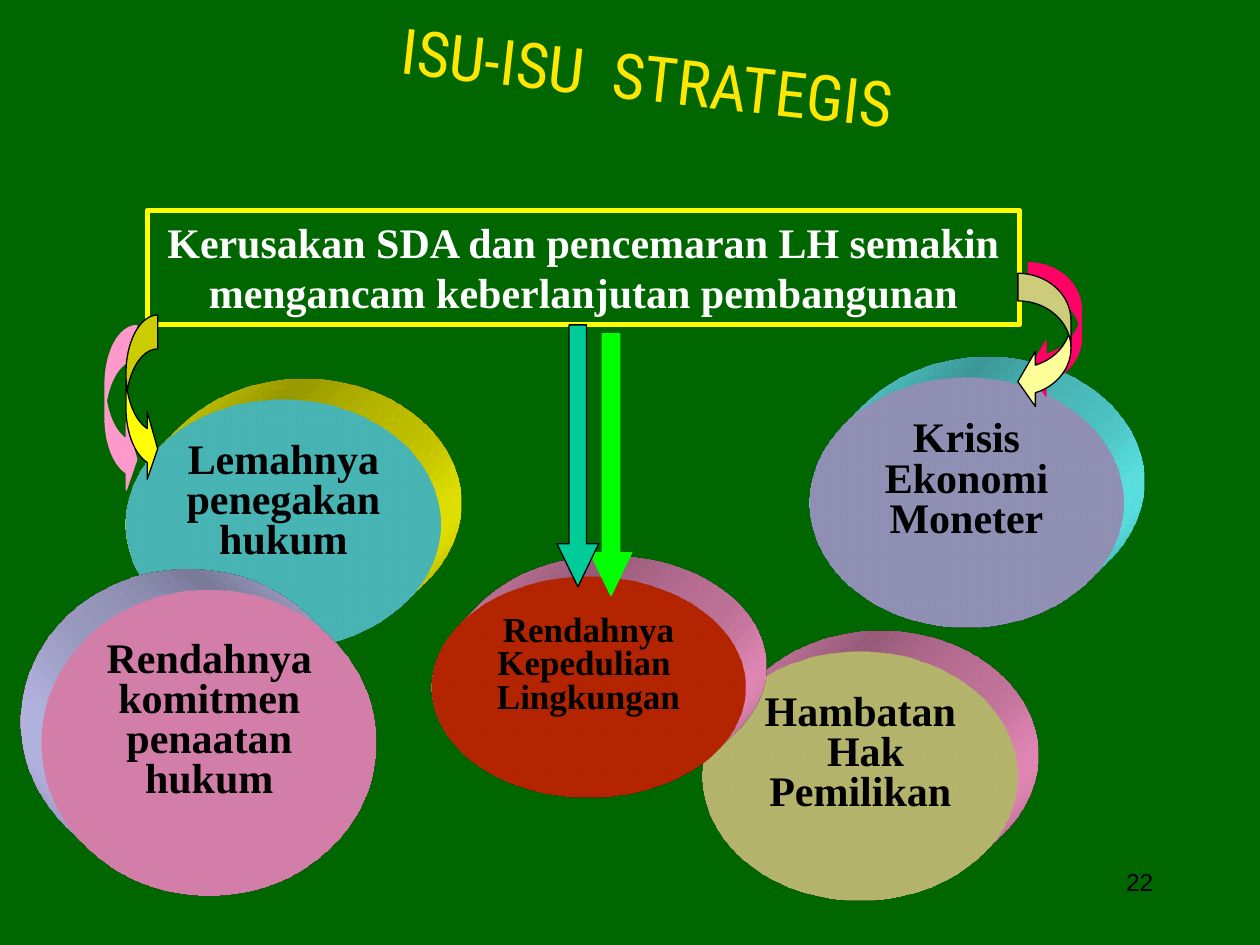
import lxml.etree
import pptx
import pptx.dml.color
import pptx.enum.dml
import pptx.enum.shapes
import pptx.enum.text
import pptx.oxml
import pptx.oxml.ns
import pptx.util

Cm = pptx.util.Cm
Pt = pptx.util.Pt
RGBColor = pptx.dml.color.RGBColor
SHAPE = pptx.enum.shapes.MSO_SHAPE
ALIGN = pptx.enum.text.PP_ALIGN

GREEN = RGBColor(0x00, 0x66, 0x00)
BLACK = RGBColor(0x00, 0x00, 0x00)
WHITE = RGBColor(0xFF, 0xFF, 0xFF)
YELLOW = RGBColor(0xFF, 0xFF, 0x00)
CREAM = RGBColor(0xFF, 0xFF, 0x99)
CYAN = RGBColor(0x66, 0xFF, 0xFF)
PINK = RGBColor(0xFF, 0x99, 0xCC)
LILAC = RGBColor(0xCC, 0xCC, 0xFF)
RED = RGBColor(0xFF, 0x33, 0x00)
CRIMSON = RGBColor(0xFF, 0x00, 0x66)
TEAL = RGBColor(0x00, 0xCC, 0x99)
LIME = RGBColor(0x00, 0xFF, 0x00)
TITLE_TOP = RGBColor(0xFF, 0xE7, 0x01)
TITLE_BOTTOM = RGBColor(0xFE, 0x3E, 0x02)


def write(box, text, size, font, color, align, spacing=None):
    """Fill a box with top-anchored paragraphs in one format."""
    frame = box.text_frame
    frame.word_wrap = True
    frame.vertical_anchor = pptx.enum.text.MSO_ANCHOR.TOP
    frame.text = text
    for para in frame.paragraphs:
        para.alignment = align
        para.line_spacing = spacing
        for span in para.runs:
            span.font.size = Pt(size)
            span.font.name = font
            span.font.bold = font == "Times New Roman"
            if color is not None:
                span.font.color.rgb = color


def extrude(shape, color, side):
    """Give a shape an oblique depth towards the named top corner."""
    ns = pptx.oxml.ns.nsdecls("a")
    properties = shape.element.spPr
    properties.append(pptx.oxml.parse_xml(
        f'<a:scene3d {ns}><a:camera prst="legacyOblique{side}"/>'
        '<a:lightRig rig="legacyFlat3" dir="b"/></a:scene3d>'))
    properties.append(pptx.oxml.parse_xml(
        f'<a:sp3d {ns} extrusionH="430200" prstMaterial="legacyMatte">'
        f'<a:extrusionClr><a:srgbClr val="{color}"/></a:extrusionClr></a:sp3d>'))


deck = pptx.Presentation()
deck.slide_width, deck.slide_height = Cm(25.4), Cm(19.05)
page = deck.slides.add_slide(deck.slide_layouts[5])
page.background.fill.solid()
page.background.fill.fore_color.rgb = GREEN

# Title
title = page.shapes.title
title.left, title.top, title.width, title.height = Cm(6.45), Cm(0.64), Cm(13.13), Cm(2.44)
title.rotation = 6.3
write(title, "ISU-ISU  STRATEGIS", 36, "Roboto Condensed", None, ALIGN.CENTER)
title.text_frame.word_wrap = False
title.text_frame.auto_size = pptx.enum.text.MSO_AUTO_SIZE.NONE
title_fill = title.text_frame.paragraphs[0].runs[0].font.fill
title_fill.gradient()
title_fill.gradient_angle = 276
for stop, color in zip(title_fill.gradient_stops, (TITLE_TOP, TITLE_BOTTOM)):
    stop.color.rgb = color

# Main issue
issue = page.shapes.add_shape(SHAPE.RECTANGLE, Cm(2.97), Cm(4.24), Cm(17.58), Cm(2.31))
issue.shadow.inherit = False
issue.fill.background()
issue.line.color.rgb = YELLOW
issue.line.width = Pt(3)
write(issue, "Kerusakan SDA dan pencemaran LH semakin mengancam keberlanjutan pembangunan",
      24, "Times New Roman", WHITE, ALIGN.CENTER)

# Causes: text, size, left, top, width, height, face, depth colour, depth side
causes = [
    ("Lemahnya penegakan hukum", 24, 2.54, 8.05, 6.35, 5.03, CYAN, YELLOW, "TopRight"),
    ("Rendahnya komitmen penaatan hukum", 24, 0.84, 11.89, 6.76, 6.17, PINK, LILAC, "TopLeft"),
    ("Krisis Ekonomi Moneter", 24, 16.31, 7.62, 6.35, 5.03, LILAC, CYAN, "TopRight"),
    ("Hambatan  Hak Pemilikan", 24, 14.17, 13.13, 6.35, 5.03, CREAM, PINK, "TopRight"),
    ("Rendahnya Kepedulian \nLingkungan", 20, 8.69, 11.63, 6.35, 4.45, RED, PINK, "TopRight"),
]
for text, size, left, top, width, height, face, depth, side in causes:
    cause = page.shapes.add_shape(SHAPE.OVAL, Cm(left), Cm(top), Cm(width), Cm(height))
    cause.shadow.inherit = False
    cause.fill.solid()
    cause.fill.fore_color.rgb = face
    cause.line.fill.background()
    write(cause, text, size, "Times New Roman", BLACK, ALIGN.CENTER, 0.8)
    extrude(cause, depth, side)

# Arrows: kind, left, top, width, height, adjustments, fill, shadow colour, distance, angle
arrows = [
    (SHAPE.CURVED_RIGHT_ARROW, 2.54, 6.35, 0.64, 3.38, (1.07, 2.13, 0.33),
     YELLOW, PINK, 13.4, 153),
    (SHAPE.CURVED_LEFT_ARROW, 20.52, 5.51, 1.07, 2.74, (0.52, 1.04, 0.33),
     CREAM, CRIMSON, 8.5, 315),
    (SHAPE.DOWN_ARROW, 11.23, 6.55, 0.84, 5.28, (0.42, 1.03), TEAL, LIME, 19.6, 15),
]
for kind, left, top, width, height, adjustments, color, shade, distance, angle in arrows:
    arrow = page.shapes.add_shape(kind, Cm(left), Cm(top), Cm(width), Cm(height))
    for index, value in enumerate(adjustments):
        arrow.adjustments[index] = value
    arrow.fill.solid()
    arrow.fill.fore_color.rgb = color
    arrow.line.color.rgb = BLACK
    arrow.line.width = Pt(0.75)
    arrow.shadow.inherit = False
    effects = arrow.element.spPr.find(pptx.oxml.ns.qn("a:effectLst"))
    shadow = lxml.etree.SubElement(
        effects, pptx.oxml.ns.qn("a:outerShdw"), dist=str(Pt(distance)),
        dir=str(angle * 60000), algn="ctr", rotWithShape="0")
    lxml.etree.SubElement(shadow, pptx.oxml.ns.qn("a:srgbClr"), val=str(shade))

# Page number
number = page.shapes.add_textbox(Cm(18.21), Cm(17.35), Cm(5.29), Cm(1.27))
write(number, "22", 14, "Arial", BLACK, ALIGN.RIGHT)

deck.save("out.pptx")
